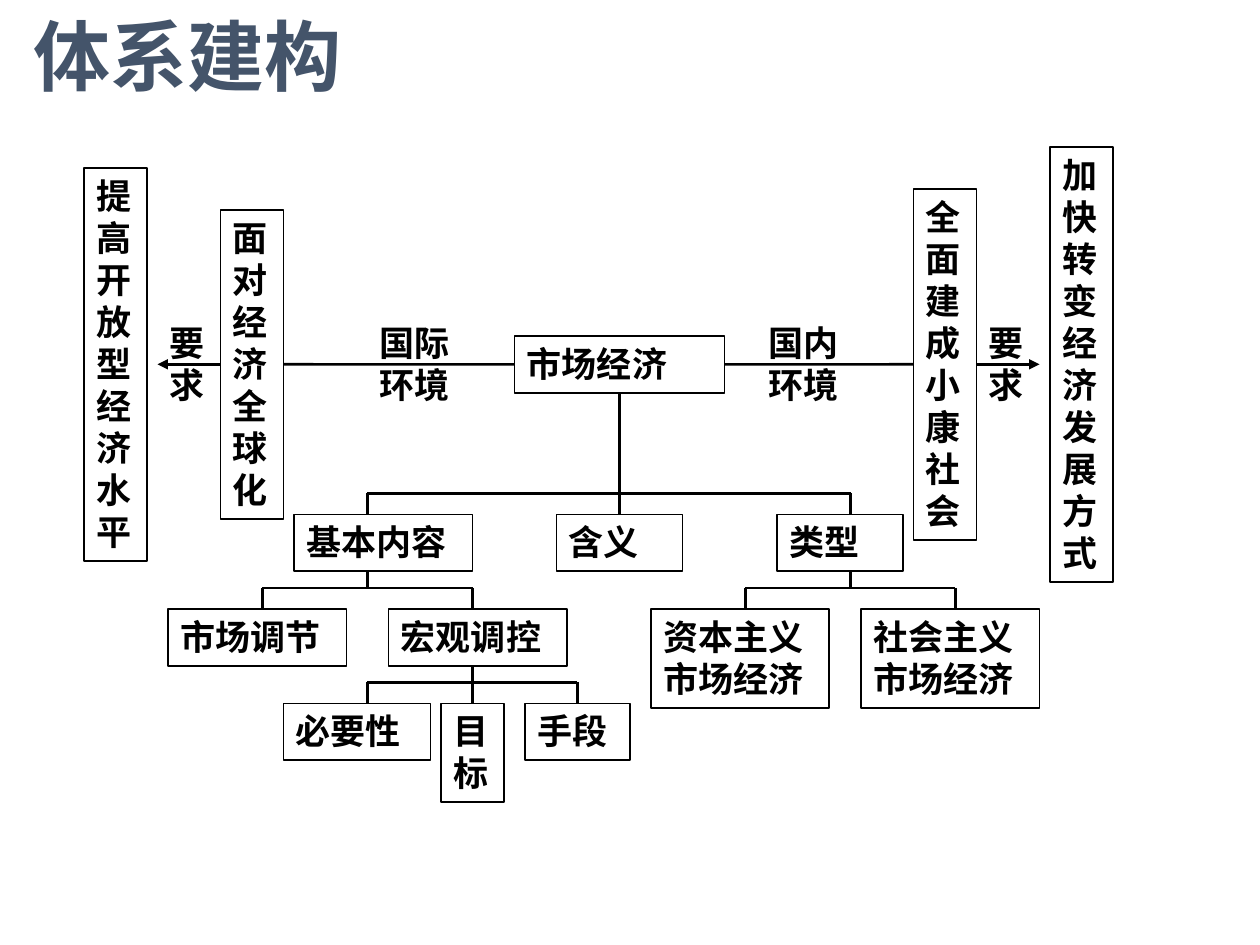
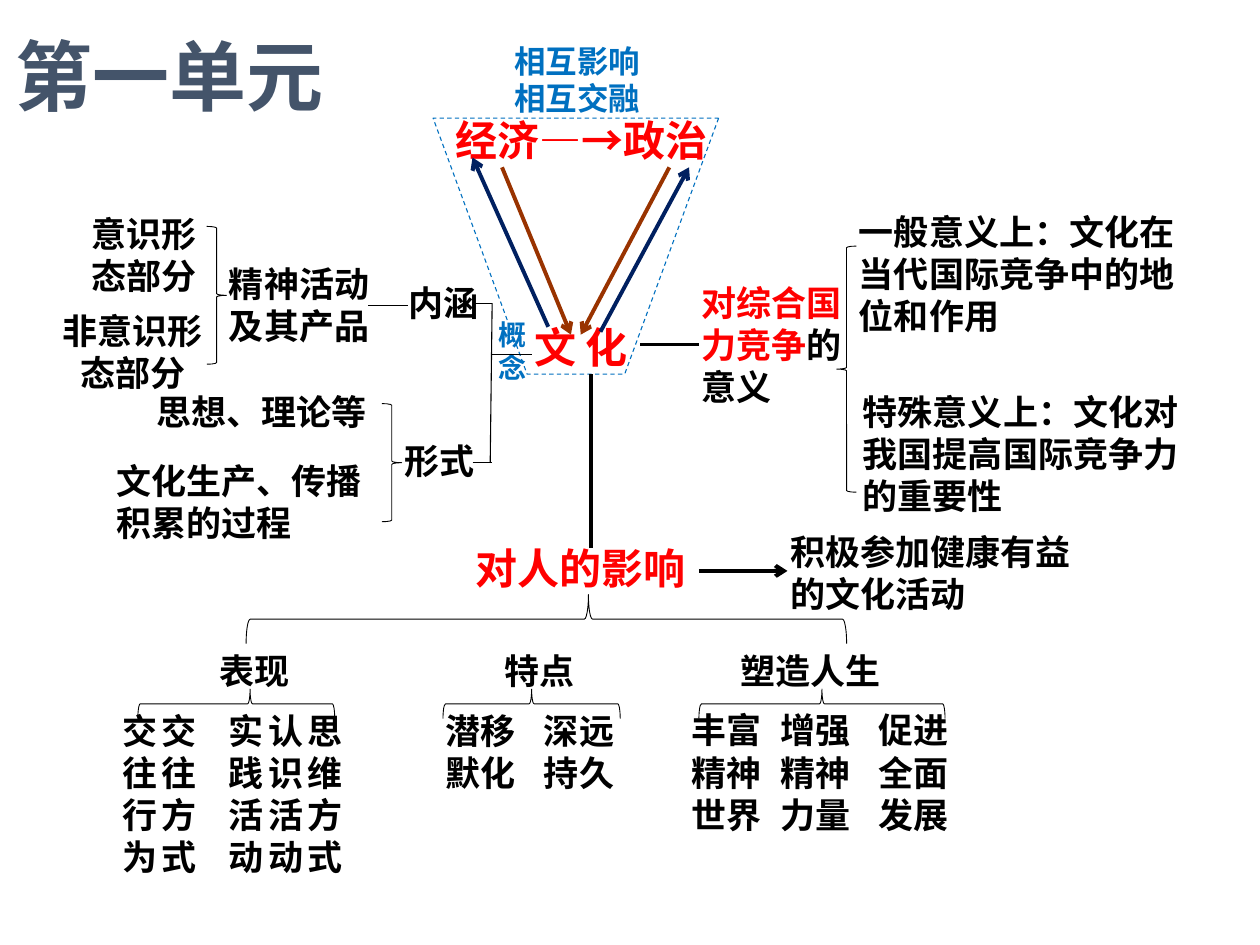
from dataclasses import dataclass
from lxml.etree import SubElement
from pptx import Presentation
from pptx.dml.color import RGBColor
from pptx.enum.dml import MSO_LINE
from pptx.enum.shapes import MSO_CONNECTOR, MSO_SHAPE
from pptx.enum.text import MSO_ANCHOR, PP_ALIGN
from pptx.oxml.ns import qn
from pptx.util import Inches, Pt

WIDE, HIGH = 10, 7.5
TOP, LEFT, BOTTOM, RIGHT = range(4)


@dataclass(frozen=True)
class Theme:
    ink: str = "000000"
    slate: str = "44546A"
    red: str = "FF0000"
    blue: str = "0070C0"
    navy: str = "002060"
    rust: str = "993300"
    latin: str = "Arial"
    asian: str = "Noto Sans CJK SC"
    title: int = 44
    head: int = 24
    body: int = 20
    note: int = 18
    small: int = 16
    bold: float = 2.25
    rule: float = 1.5
    edge: float = 1
    thin: float = 0.63
    hair: float = 0.5


class Board:
    """Draws on the current slide; lengths are cells of its square grid."""

    def __init__(self, theme):
        self.theme = theme
        self.deck = Presentation()
        self.deck.slide_width, self.deck.slide_height = Inches(WIDE), Inches(HIGH)

    def start(self, cols, font, title, x, y):
        self.slide = self.deck.slides.add_slide(self.deck.slide_layouts[6])
        self.shapes = self.slide.shapes
        self.cell = WIDE / cols
        self.font = font
        self.text(x, y, 0.4 * cols, 1, title, self.theme.title, self.theme.slate)

    def pos(self, *cells):
        return [Inches(n * self.cell) for n in cells]

    def tall(self, lines, size, pad=0.1):
        """Height in cells of a text frame with this many lines."""
        return (pad + lines * size / 60) / self.cell

    def style(self, run, size, color):
        run.font.name = self.font
        run.font.size = Pt(size)
        run.font.bold = True
        run.font.color.rgb = RGBColor.from_string(color)
        SubElement(run.font._element, qn("a:ea")).set("typeface", self.theme.asian)

    def fill(self, shape, text, size, color, align=PP_ALIGN.LEFT, rest=""):
        frame = shape.text_frame
        frame.text = text
        frame.word_wrap = "\n" not in text
        frame.vertical_anchor = MSO_ANCHOR.TOP
        for para in frame.paragraphs:
            para.alignment = align
            for run in para.runs:
                self.style(run, size, color)
        if rest:
            run = frame.paragraphs[-1].add_run()
            run.text = rest
            self.style(run, size, self.theme.ink)

    def text(self, x, y, w, lines, text, size=None, color=None, **more):
        size = size or self.theme.body
        shape = self.shapes.add_textbox(*self.pos(x, y, w, self.tall(lines, size)))
        self.fill(shape, text, size, color or self.theme.ink, **more)

    def form(self, kind, x, y, w, h, color, width):
        shape = self.shapes.add_shape(kind, *self.pos(x, y, w, h))
        shape.shadow.inherit = False
        shape.fill.background()
        shape.line.color.rgb = RGBColor.from_string(color)
        shape.line.width = Pt(width)
        return shape

    def box(self, x, y, w, text, lines=1):
        look = self.theme
        high = self.tall(lines, look.body, 0.117)
        shape = self.form(MSO_SHAPE.RECTANGLE, x, y, w, high, look.ink, look.edge)
        self.fill(shape, text, look.body, look.ink)
        return shape

    def pillar(self, x, axis, text):
        """A box one character wide, centred on the axis."""
        high = self.tall(len(text), self.theme.body, 0.117)
        return self.box(x, axis - high / 2, 6, text, len(text))

    def brace(self, x, y, w, h, turn=0, peak=0.5):
        """A brace given by the area it covers after turning."""
        if turn == 90:
            x, y, w, h = x + (w - h) / 2, y + (h - w) / 2, h, w
        look = self.theme
        shape = self.form(MSO_SHAPE.LEFT_BRACE, x, y, w, h, look.ink, look.hair)
        shape.rotation = turn
        shape.adjustments[1] = peak

    def line(self, x1, y1, x2, y2, width=None, color=None, arrow=None,
             begin=None, end=None):
        link = self.shapes.add_connector(MSO_CONNECTOR.STRAIGHT, *self.pos(x1, y1, x2, y2))
        link.line.color.rgb = RGBColor.from_string(color or self.theme.ink)
        link.line.width = Pt(width or self.theme.rule)
        if begin:
            link.begin_connect(*begin)
        if end:
            link.end_connect(*end)
        if arrow:
            SubElement(link.line._get_or_add_ln(), qn("a:tailEnd")).set("type", arrow)
        SubElement(link._element.spPr, qn("a:effectLst"))

    def dock(self, box, x, side):
        """The joint of a box if x is the middle of its side."""
        gap = box.left + box.width / 2 - Inches(x * self.cell)
        return (box, side) if abs(gap) < Pt(1) else None

    def fork(self, root, x, bus, kids):
        """A stem below root, a bar, and a drop to each (x, box)."""
        foot = (root.top + root.height) / Inches(self.cell)
        self.line(x, foot, x, bus, begin=self.dock(root, x, BOTTOM))
        self.line(kids[0][0], bus, kids[-1][0], bus)
        for at, kid in kids:
            self.line(at, bus, at, bus + 2, end=self.dock(kid, at, TOP))


def market(board):
    board.start(120, board.theme.latin, "体系建构", 2, 0.2)
    axis = 34.7

    # Tree below the centre
    hub = board.box(49, 32, 20, "市场经济")
    core = board.box(28, 49, 17, "基本内容")
    sense = board.box(53, 49, 12, "含义")
    types = board.box(74, 49, 12, "类型")
    adjust = board.box(16, 58, 17, "市场调节")
    control = board.box(37, 58, 17, "宏观调控")
    capital = board.box(62, 58, 17, "资本主义市场经济", 2)
    social = board.box(82, 58, 17, "社会主义市场经济", 2)
    need = board.box(27, 67, 14, "必要性")
    goal = board.box(42, 67, 6, "目标", 2)
    means = board.box(50, 67, 10, "手段")
    board.fork(hub, 59, 47, [(35, core), (59, sense), (81, types)])
    board.fork(core, 35, 56, [(25, adjust), (45, control)])
    board.fork(types, 81, 56, [(71, capital), (91, social)])
    board.fork(control, 45, 65, [(35, need), (45, goal), (55, means)])

    # Outer pillars and the axis
    board.pillar(8, axis, "提高开放型经济水平")
    board.pillar(100, axis, "加快转变经济发展方式")
    world = board.pillar(21, axis, "面对经济全球化")
    home = board.pillar(87, axis, "全面建成小康社会")
    board.line(49, axis, 27, axis, begin=(hub, LEFT), end=(world, RIGHT))
    board.line(69, axis, 87, axis, begin=(hub, RIGHT), end=(home, LEFT))
    board.line(21, axis, 15, axis, arrow="triangle", begin=(world, LEFT))
    board.line(93, axis, 99, axis, arrow="triangle", begin=(home, RIGHT))
    for x, w, label in ((35, 9.1, "国际\n环境"), (72, 9.1, "国内\n环境"),
                        (15, 5.8, "要\n求"), (93, 5.8, "要\n求")):
        board.text(x, 30, w, 2, label)


def culture(board):
    look = board.theme
    board.start(128, look.asian, "第一单元", 0.3, 2.3)

    # Triangle of economy, politics and culture
    board.text(53, 32, 14, 1, "文 化", look.head, look.red)
    board.text(45, 11, 31, 1, "经济—→政治", look.head, look.red)
    board.text(51, 3.6, 17, 2, "相互影响相互交融", look.note, look.blue)
    board.text(49.4, 31.6, 6, 2, "概\n念", look.small, look.blue)
    frame = board.form(MSO_SHAPE.TRAPEZOID, 44, 12, 29, 26, look.blue, look.thin)
    frame.rotation = 180
    frame.adjustments[0] = 0.367
    frame.line.dash_style = MSO_LINE.DASH
    for color, *ends in ((look.rust, 51, 17, 58, 34), (look.rust, 68, 17, 59, 34),
                         (look.navy, 55.7, 33.2, 48, 16), (look.navy, 61, 33.7, 70, 17)):
        board.line(*ends, look.bold, color, "arrow")

    # Concept, on the left
    for x, y, w, lines, words in (
            (39.8, 44, 11, 1, "形式"), (40.2, 28, 11, 1, "内涵"),
            (22, 26, 17, 2, "精神活动及其产品"), (14.6, 39, 25, 1, "思想、理论等"),
            (10.6, 46, 28, 2, "文化生产、传播积累的过程"), (8, 21, 15, 2, "意识形态部分")):
        board.text(x, y, w, lines, words)
    board.text(4.5, 30.8, 18, 2, "非意识形态部分", align=PP_ALIGN.CENTER)
    board.brace(21, 23, 2, 14, 180)
    board.brace(38.8, 41, 2, 12, 180)
    for ends in ((50, 30.8, 49.8, 47), (37.4, 31, 41.4, 31), (50, 36, 54, 36),
                 (48, 30.8, 50, 30.8), (48, 47, 50, 47)):
        board.line(*ends, look.thin)

    # Meaning, on the right
    board.text(70, 28, 18, 3, "对综合国力竞争", color=look.red, rest="的意义")
    board.text(86, 20.8, 36, 3, "一般意义上：文化在当代国际竞争中的地位和作用")
    board.text(86.4, 39, 36, 3, "特殊意义上：文化对我国提高国际竞争力的重要性")
    board.brace(85, 25, 2, 25)
    board.line(71, 35, 65, 35, look.bold)

    # Influence on people
    board.text(47, 54.5, 25, 1, "对人的影响", look.head, look.red)
    board.text(79, 53.3, 34.4, 2, "积极参加健康有益的文化活动")
    board.line(60, 38, 60, 55.7, look.bold)
    board.line(71, 58, 80, 58, look.bold, arrow="arrow")
    board.brace(25, 60.4, 61, 5, 90, 0.43)

    # Three branches: heading, brace and leaves
    branches = (
        (21, 11, "表现", 14, 20, 0.43,
         ((11.2, 9, 4, "交往行为"), (15.2, 8, 4, "交往方式"), (22, 6, 4, "实践活动"),
          (26, 6, 4, "认识活动"), (30, 6, 4, "思维方式"))),
        (50, 11, "特点", 45, 18, 0.5,
         ((44, 10, 2, "潜移默化"), (54, 11, 2, "深远持久"))),
        (74, 17, "塑造人生", 71, 25, 0.5,
         ((69, 10, 3, "丰富精神世界"), (78, 10, 3, "增强精神力量"),
          (88, 10, 3, "促进全面发展"))))
    for x, w, head, start, span, peak, leaves in branches:
        board.text(x, 65.3, w, 1, head)
        board.brace(start, 70, span, 3, 90, peak)
        for left, wide, lines, leaf in leaves:
            board.text(left, 71.4, wide, lines, leaf)


def main():
    board = Board(Theme())
    market(board)
    culture(board)
    board.deck.save("out.pptx")


if __name__ == "__main__":
    main()
